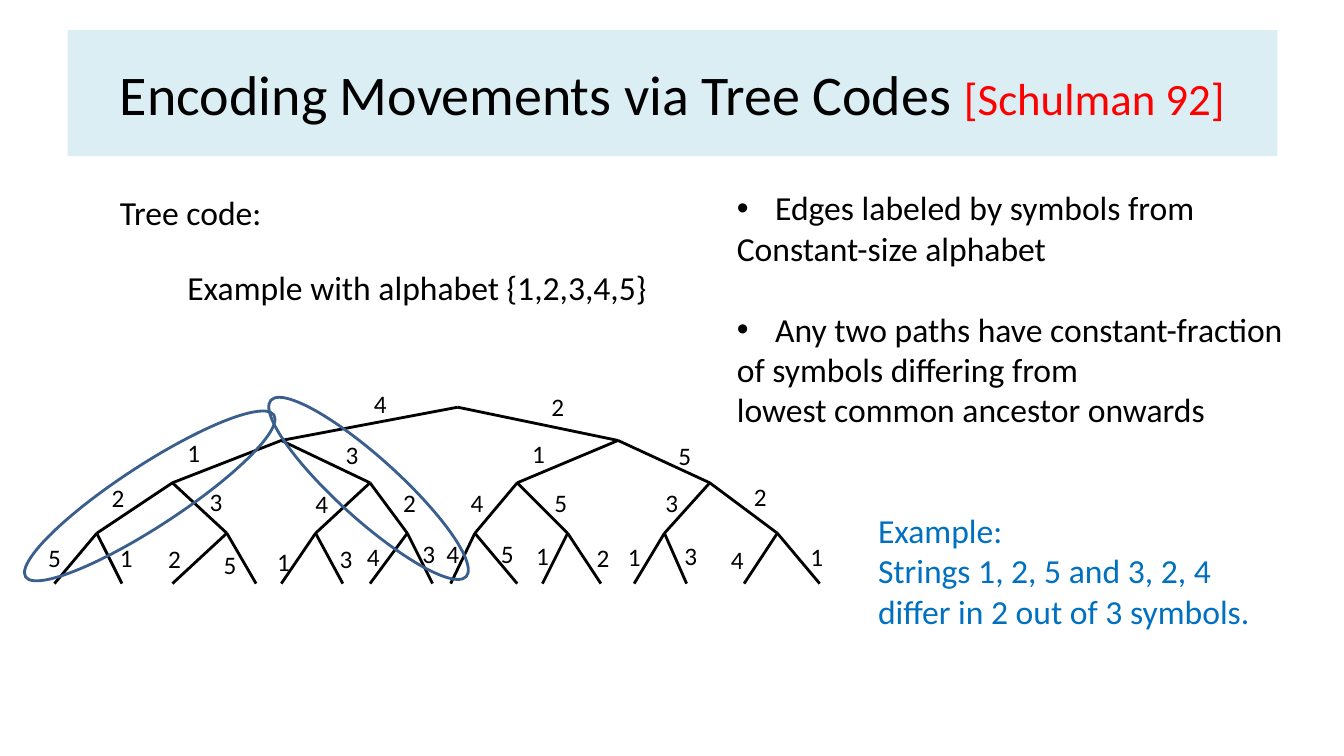
from dataclasses import dataclass
from lxml.etree import SubElement
from pptx import Presentation
from pptx.dml.color import RGBColor
from pptx.enum.shapes import MSO_CONNECTOR, MSO_SHAPE
from pptx.enum.text import MSO_ANCHOR, MSO_AUTO_SIZE, PP_ALIGN
from pptx.oxml.ns import qn
from pptx.util import Inches, Pt


@dataclass(frozen=True)
class Theme:
    font: str = "Calibri"
    ink: RGBColor = RGBColor(0, 0, 0)
    band: RGBColor = RGBColor(0xDB, 0xEE, 0xF4)
    cite: RGBColor = RGBColor(0xFF, 0, 0)
    note: RGBColor = RGBColor(0, 0x70, 0xC0)
    ring: RGBColor = RGBColor(0x3A, 0x5F, 0x8C)
    head: Pt = Pt(40)
    ref: Pt = Pt(32)
    body: Pt = Pt(24)
    label: Pt = Pt(18)
    gap: Pt = Pt(29)
    line: Pt = Pt(2)


THEME = Theme()

# Each level: height, then node positions from left to right.
LEVELS = [
    (4.04, [4.54]),
    (4.37, [2.79, 6.13]),
    (4.79, [1.71, 3.67, 5.13, 7.04]),
    (5.29, [0.96, 2.25, 3.13, 4.04, 4.71, 5.63, 6.59, 7.71]),
    (5.79, [0.54, 1.21, 1.71, 2.54, 2.79, 3.4, 3.67, 4.29,
            4.47, 5.13, 5.38, 5.96, 6.29, 6.81, 7.38, 8.13]),
]

# Symbol, left and top of each edge label, in the order of the edges.
LABELS = [
    ("4", 3.61, 3.8), ("2", 5.37, 3.83),
    ("1", 1.76, 4.29), ("3", 3.33, 4.31), ("1", 5.18, 4.3), ("5", 6.63, 4.32),
    ("2", 1.01, 4.74), ("3", 1.98, 4.78), ("4", 3.03, 4.8), ("2", 3.9, 4.79),
    ("4", 4.57, 4.79), ("5", 5.4, 4.79), ("3", 6.5, 4.79), ("2", 7.38, 4.73),
    ("5", 0.38, 5.33), ("1", 1.09, 5.33), ("2", 1.57, 5.34), ("5", 2.12, 5.4),
    ("1", 2.65, 5.37), ("3", 3.27, 5.34), ("4", 3.54, 5.32), ("3", 4.09, 5.29),
    ("4", 4.33, 5.29), ("5", 4.87, 5.29), ("1", 5.22, 5.31), ("2", 5.82, 5.33),
    ("1", 6.13, 5.32), ("3", 6.69, 5.31), ("4", 7.15, 5.35), ("1", 7.94, 5.32),
]


def style(font, size, color):
    font.name = THEME.font
    font.size = size
    font.color.rgb = color


def add_title(slide, text, cite):
    title = slide.shapes.title
    title.left, title.top = Inches(0.67), Inches(0.3)
    title.width, title.height = Inches(12), Inches(1.25)
    title.fill.solid()
    title.fill.fore_color.rgb = THEME.band
    frame = title.text_frame
    frame.auto_size = MSO_AUTO_SIZE.NONE
    frame.vertical_anchor = MSO_ANCHOR.MIDDLE
    para = frame.paragraphs[0]
    para.alignment = PP_ALIGN.CENTER
    parts = [(text, THEME.head, THEME.ink), (cite, THEME.ref, THEME.cite)]
    for words, size, color in parts:
        run = para.add_run()
        run.text = words
        style(run.font, size, color)


def add_text(slide, box, lines, size=THEME.body, color=THEME.ink):
    """Add a text box with one paragraph per line and return its paragraphs."""
    frame = slide.shapes.add_textbox(*map(Inches, box)).text_frame
    frame.word_wrap = False
    frame.auto_size = MSO_AUTO_SIZE.SHAPE_TO_FIT_TEXT
    frame.text = "\n".join(lines)
    for para in frame.paragraphs:
        style(para.font, size, color)
    return frame.paragraphs


def add_bullet(para):
    props = para._p.get_or_add_pPr()
    props.set("marL", str(Inches(0.38)))
    props.set("indent", str(-Inches(0.38)))
    SubElement(props, qn("a:buFont")).set("typeface", "Arial")
    SubElement(props, qn("a:buChar")).set("char", "•")
    # The schema puts the default run format after the bullet.
    props.append(props.find(qn("a:defRPr")))


def add_edge(slide, start, end):
    ends = map(Inches, (*start, *end))
    edge = slide.shapes.add_connector(MSO_CONNECTOR.STRAIGHT, *ends)
    edge.line.color.rgb = THEME.ink
    edge.line.width = THEME.line
    SubElement(edge._element.spPr, qn("a:effectLst"))


def add_tree(slide):
    for (top, nodes), (low, kids) in zip(LEVELS, LEVELS[1:]):
        for i, x in enumerate(kids):
            add_edge(slide, (nodes[i // 2], top), (x, low))
    for symbol, x, y in LABELS:
        add_text(slide, (x, y, 0.33, 0.4), [symbol], THEME.label)


def add_ring(slide, box, angle):
    ring = slide.shapes.add_shape(MSO_SHAPE.OVAL, *map(Inches, box))
    ring.rotation = angle
    ring.shadow.inherit = False
    ring.fill.background()
    ring.line.color.rgb = THEME.ring
    ring.line.width = THEME.line


def main():
    deck = Presentation()
    deck.slide_width, deck.slide_height = Inches(13.33), Inches(7.5)
    slide = deck.slides.add_slide(deck.slide_layouts.get_by_name("Title Only"))
    add_title(slide, "Encoding Movements via Tree Codes ", "[Schulman 92]")
    add_text(slide, (1.09, 1.85, 1.62, 0.5), ["Tree code:"])
    add_text(slide, (1.76, 2.6, 4.8, 0.5), ["Example with alphabet {1,2,3,4,5}"])
    facts = add_text(slide, (7.21, 1.81, 5.67, 2.93), [
        "Edges labeled by symbols from",
        "Constant-size alphabet",
        "Any two paths have constant-fraction",
        "of symbols differing from",
        "lowest common ancestor onwards",
    ])
    facts[2].space_before = THEME.gap
    for i in (0, 2):
        add_bullet(facts[i])
    add_tree(slide)
    add_ring(slide, (1.18, 3.45, 0.61, 2.94), 56.9)
    add_ring(slide, (3.35, 3.54, 0.61, 2.61), 132.1)
    add_text(slide, (8.61, 5.01, 3.92, 1.31), [
        "Example:",
        "Strings 1, 2, 5 and 3, 2, 4",
        "differ in 2 out of 3 symbols.",
    ], color=THEME.note)
    deck.save("out.pptx")


if __name__ == "__main__":
    main()
